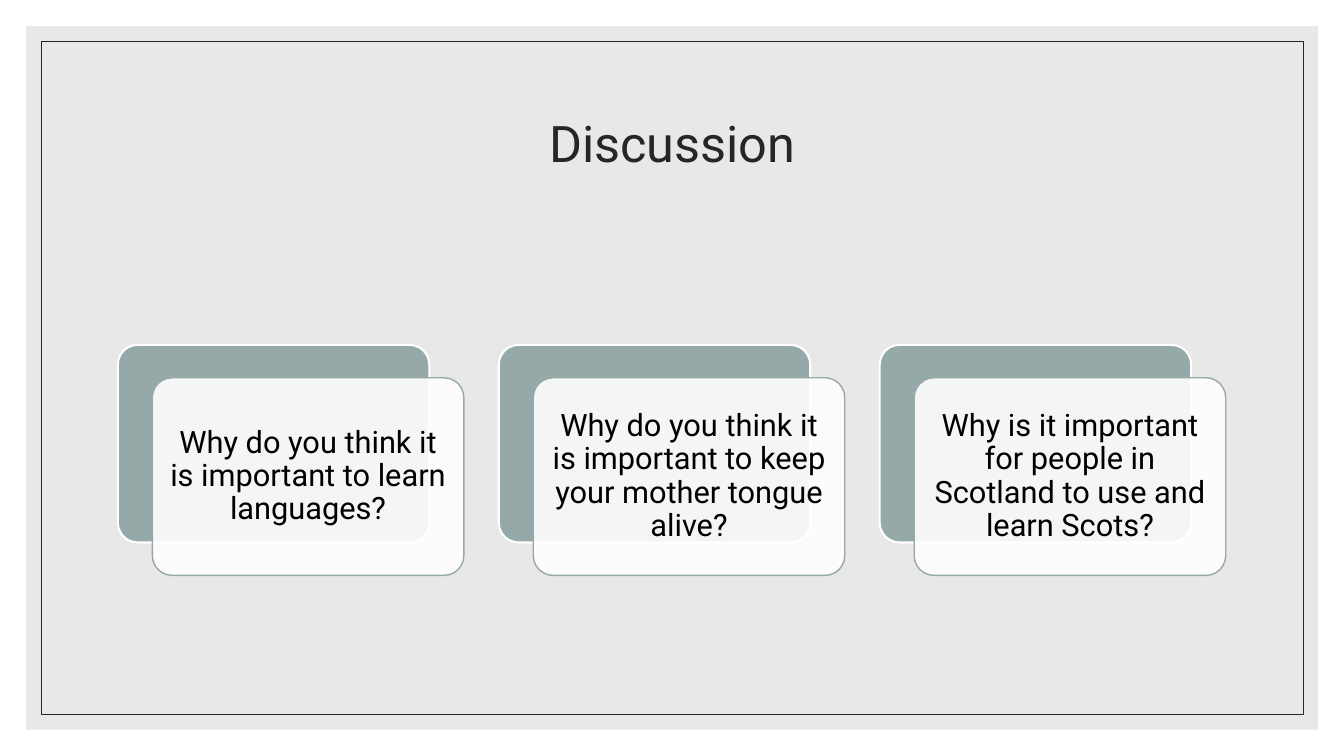
from lxml.etree import SubElement
from pptx import Presentation
from pptx.dml.color import RGBColor
from pptx.enum.shapes import MSO_SHAPE as SHAPE
from pptx.enum.text import MSO_ANCHOR as ANCHOR, PP_ALIGN as ALIGN
from pptx.oxml.ns import qn
from pptx.util import Cm, Pt

FONT = "Roboto"
SAGE = "96A9A9"
WHITE = "FFFFFF"
DARK = "262626"
QUESTIONS = [
    "Why do you think it is important to learn languages?",
    "Why do you think it is important to keep your mother tongue alive?",
    "Why is it important for people in Scotland to use and learn Scots?",
]
CARD_LEFT, CARD_TOP, CARD_STEP = 2.97, 8.69, 9.6
CARD_W, CARD_H = 7.85, 4.98
OFFSET_X, OFFSET_Y = 0.87, 0.83


def rgb(color):
    return RGBColor.from_string(color)


def set_opacity(sp, percent):
    color = sp.element.spPr.find(qn("a:solidFill"))[0]
    SubElement(color, qn("a:alpha"), val=str(percent * 1000))


def add_box(s, kind, x, y, w, h, fill=None, opacity=100, line=None, width=1):
    sp = s.shapes.add_shape(kind, Cm(x), Cm(y), Cm(w), Cm(h))
    sp.shadow.inherit = False
    if fill:
        sp.fill.solid()
        sp.fill.fore_color.rgb = rgb(fill)
        if opacity < 100:
            set_opacity(sp, opacity)
    else:
        sp.fill.background()
    if line:
        sp.line.color.rgb = rgb(line)
        sp.line.width = Pt(width)
    else:
        sp.line.fill.background()
    return sp


def write_text(sp, text, size, color, inset=None):
    tf = sp.text_frame
    tf.word_wrap = True
    tf.vertical_anchor = ANCHOR.MIDDLE
    if inset is not None:
        tf.margin_left = tf.margin_right = Cm(inset)
        tf.margin_top = tf.margin_bottom = Cm(inset)
    p = tf.paragraphs[0]
    p.alignment = ALIGN.CENTER
    p.line_spacing = 0.9
    r = p.add_run()
    r.text = text
    r.font.name = FONT
    r.font.size = Pt(size)
    r.font.color.rgb = rgb(color)


def add_title(s, text):
    title = s.shapes.title
    title.left, title.top = Cm(2.97), Cm(1.78)
    title.width, title.height = Cm(27.94), Cm(3.81)
    write_text(title, text, size=36, color=DARK)
    s.shapes.element.append(title.element)


def add_card(s, x, y, question):
    back = add_box(s, SHAPE.ROUNDED_RECTANGLE, x, y, CARD_W, CARD_H,
                   fill=SAGE, line=WHITE, width=1.5)
    front = add_box(s, SHAPE.ROUNDED_RECTANGLE, x + OFFSET_X, y + OFFSET_Y,
                    CARD_W, CARD_H, fill=WHITE, opacity=90, line=SAGE)
    for sp in (back, front):
        sp.adjustments[0] = 0.1
    write_text(front, question, size=22, color="000000", inset=0.23)


def main():
    prs = Presentation()
    prs.slide_width, prs.slide_height = Cm(33.87), Cm(19.05)
    s = prs.slides.add_slide(prs.slide_layouts[5])
    s.background.fill.solid()
    s.background.fill.fore_color.rgb = rgb(WHITE)
    add_box(s, SHAPE.RECTANGLE, 0.66, 0.66, 32.56, 17.73, fill="D9D9D9", opacity=60)
    add_box(s, SHAPE.RECTANGLE, 1.04, 1.04, 31.8, 16.97, line=DARK, width=0.5)
    add_title(s, "Discussion")
    for i, question in enumerate(QUESTIONS):
        add_card(s, CARD_LEFT + i * CARD_STEP, CARD_TOP, question)
    prs.save("out.pptx")


if __name__ == "__main__":
    main()
